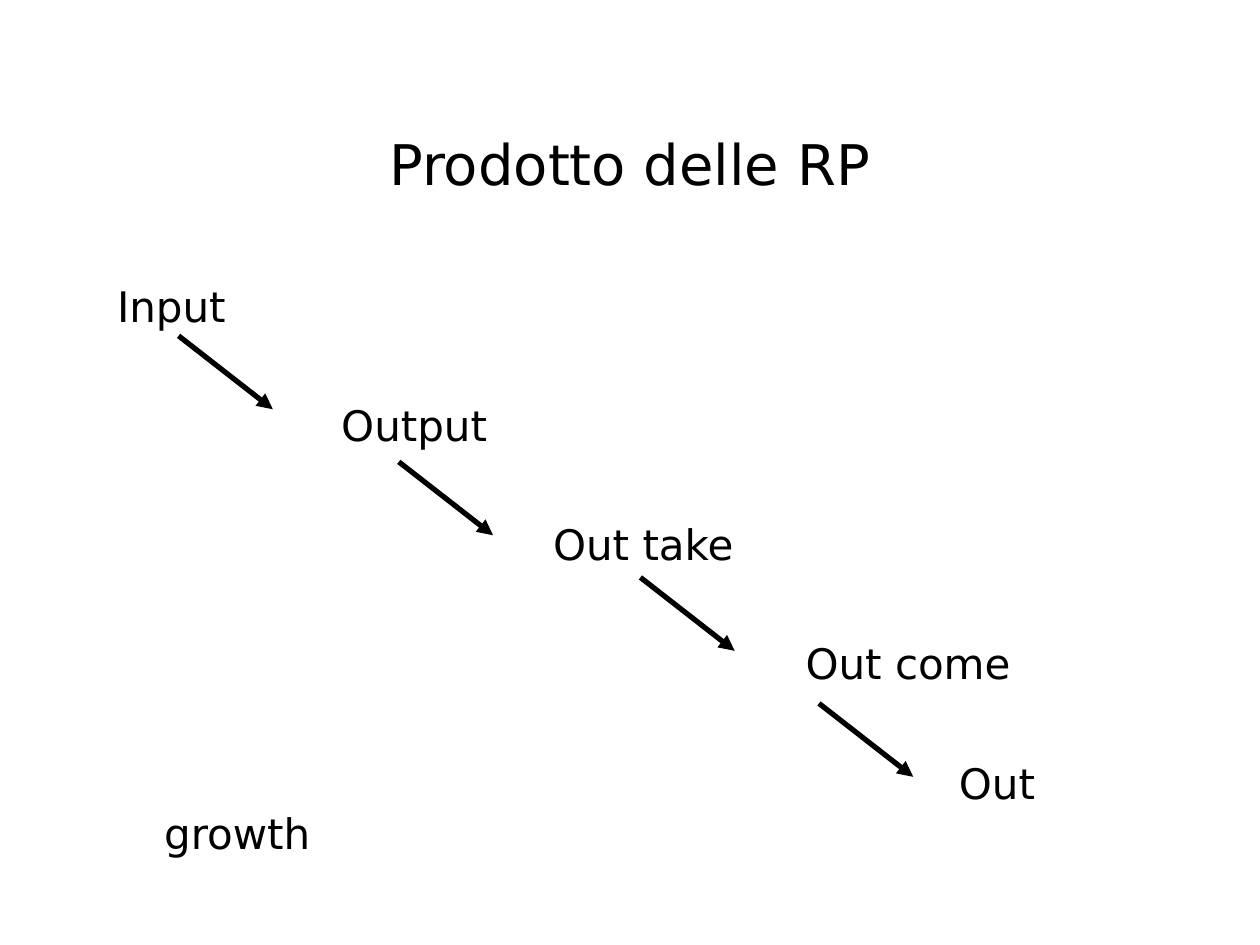
from lxml import etree
from pptx import Presentation
from pptx import util as u
from pptx.dml.color import RGBColor
from pptx.enum import shapes, text
from pptx.oxml.ns import qn

# Content: each step with its first-line offset (cm)
TITLE = "Prodotto delle RP"
STEPS = [
    ("Input", 0),
    ("Output", 4.52),
    ("Out take", 8.79),
    ("Out come", 13.88),
    ("Out growth", 16.97),
]
# Arrow starts (cm); all arrows share one run and drop
STARTS = [(3.6, 6.77), (8.04, 9.31), (12.91, 11.64), (16.51, 14.18)]
RUN, DROP = 1.9, 1.48
HANG = 0.95  # left margin of wrapped lines

COLORS = {"ink": "000000", "page": "FFFFFF"}
INK = RGBColor.from_string(COLORS["ink"])
FONT = "DejaVu Sans"

deck = Presentation()
deck.slide_width, deck.slide_height = u.Cm(25.4), u.Cm(19.05)
slide = deck.slides.add_slide(deck.slide_layouts[6])
slide.background.fill.solid()
slide.background.fill.fore_color.rgb = RGBColor.from_string(COLORS["page"])


def add_box(place, anchor):
    frame = slide.shapes.add_textbox(*map(u.Cm, place)).text_frame
    for key, val in {"word_wrap": True, "vertical_anchor": anchor}.items():
        setattr(frame, key, val)
    return frame


def write(para, words, size):
    run = para.add_run()
    run.text = words
    for key, val in {"name": FONT, "size": u.Pt(size)}.items():
        setattr(run.font, key, val)
    run.font.color.rgb = INK


# Title
head = add_box((1.9, 1.7, 21.6, 3.18), text.MSO_ANCHOR.MIDDLE).paragraphs[0]
head.alignment = text.PP_ALIGN.CENTER
write(head, TITLE, 32)

# Staircase of steps
body = add_box((2.11, 5.53, 21.6, 11.43), text.MSO_ANCHOR.TOP)
for i, (words, left) in enumerate(STEPS):
    para = body.add_paragraph() if i else body.paragraphs[0]
    if i:
        para.space_before = u.Pt(39.3)
    props = para._p.get_or_add_pPr()
    props.set("marL", str(u.Cm(HANG)))
    props.set("indent", str(u.Cm(left - HANG)))
    write(para, words, 24)

# Arrows between steps
for x, y in STARTS:
    ends = map(u.Cm, (x, y, x + RUN, y + DROP))
    arrow = slide.shapes.add_connector(shapes.MSO_CONNECTOR.STRAIGHT, *ends)
    arrow.line.width = u.Pt(3)
    arrow.line.color.rgb = INK
    etree.SubElement(arrow.line._get_or_add_ln(), qn("a:tailEnd"), type="triangle")
    etree.SubElement(arrow._element.spPr, qn("a:effectLst"))

deck.save("out.pptx")
